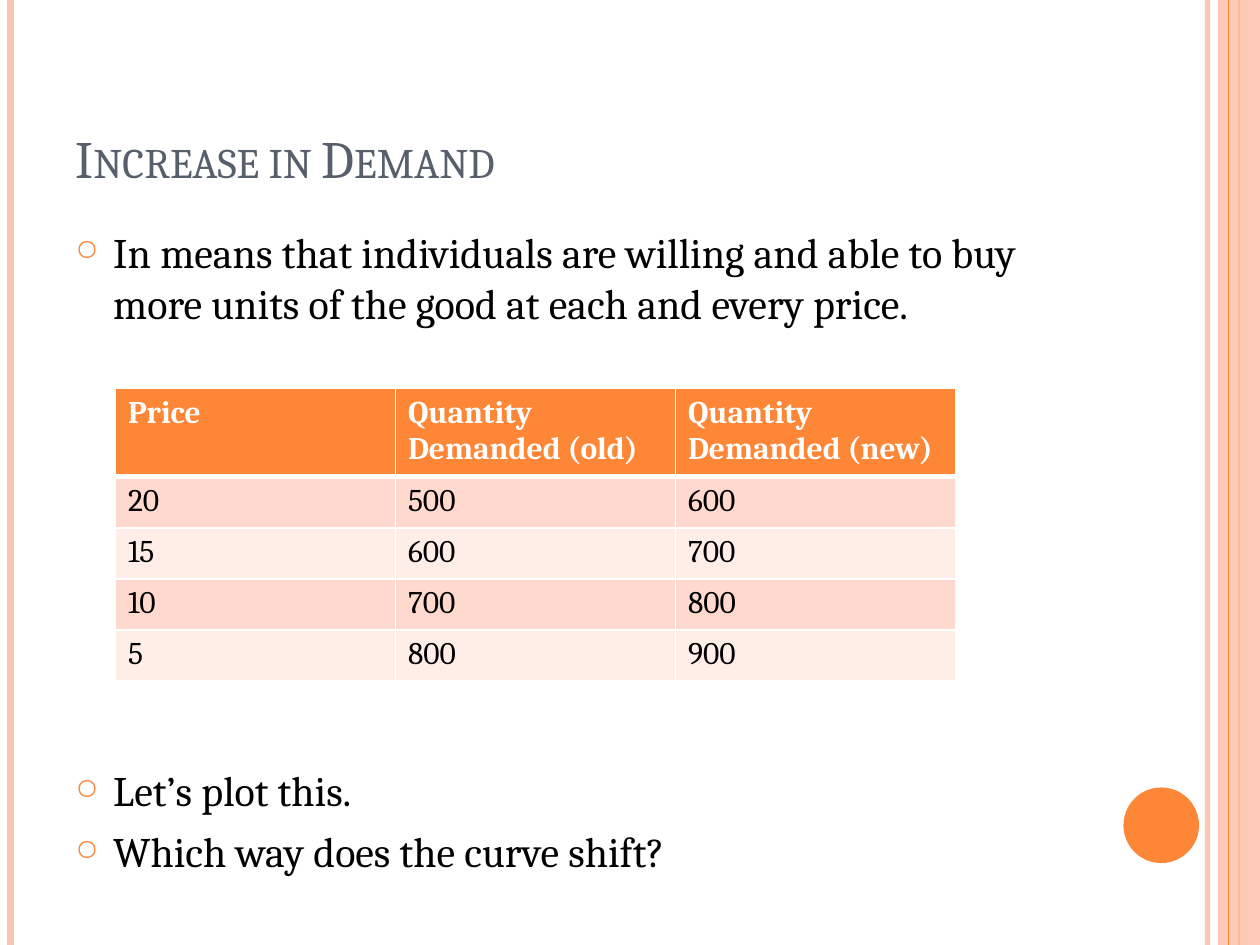
from pptx import Presentation
from pptx.dml.color import RGBColor
from pptx.enum.shapes import MSO_CONNECTOR as Connector, MSO_SHAPE as Shape
from pptx.enum.text import MSO_ANCHOR as Anchor
from pptx.oxml.ns import qn
from pptx.util import Pt
from lxml.etree import SubElement

COLORS = {
    "accent": "FE8637",
    "pale": "FEC3AE",
    "title": "575F6D",
    "text": "000000",
    "white": "FFFFFF",
    "band_dark": "FFD9CE",
    "band_light": "FFEDE8",
}


def rgb(name):
    return RGBColor.from_string(COLORS[name])


class DemandSlide:
    """Hold the style and the slide that the elements are added to."""

    font = "Cambria"
    indent = 21.6

    def __init__(self, slide):
        self.slide = slide

    def set_opacity(self, shape, percent):
        for color in shape.element.spPr.iter(qn("a:srgbClr")):
            SubElement(color, qn("a:alpha"), val=str(percent * 1000))

    def stripe(self, x, color, width, opacity=100):
        line = self.slide.shapes.add_connector(
            Connector.STRAIGHT, Pt(x), Pt(0), Pt(x), Pt(540))
        line.line.color.rgb = rgb(color)
        line.line.width = Pt(width)
        if opacity < 100:
            self.set_opacity(line, opacity)
        SubElement(line.element.spPr, qn("a:effectLst"))
        return line

    def shape(self, preset, box, color, opacity=100):
        shape = self.slide.shapes.add_shape(preset, *map(Pt, box))
        shape.shadow.inherit = False
        shape.fill.solid()
        shape.fill.fore_color.rgb = rgb(color)
        shape.line.fill.background()
        if opacity < 100:
            self.set_opacity(shape, opacity)
        return shape

    def run(self, paragraph, text, size, color, bold=False):
        run = paragraph.add_run()
        run.text = text
        run.font.name = self.font
        run.font.size = Pt(size)
        run.font.bold = bold
        run.font.color.rgb = rgb(color)
        return run

    def text_frame(self, box, anchor):
        frame = self.slide.shapes.add_textbox(*map(Pt, box)).text_frame
        frame.word_wrap = True
        frame.vertical_anchor = anchor
        return frame

    def title(self, box, text):
        frame = self.text_frame(box, Anchor.BOTTOM)
        run = self.run(frame.paragraphs[0], text, 30, "title")
        run.font._element.set("cap", "small")

    def bullets(self, box, items):
        frame = self.text_frame(box, Anchor.TOP)
        for index, (text, space_before) in enumerate(items):
            paragraph = frame.add_paragraph() if index else frame.paragraphs[0]
            paragraph.space_before = Pt(space_before)
            props = paragraph._p.get_or_add_pPr()
            props.set("marL", str(Pt(self.indent)))
            props.set("indent", str(-Pt(self.indent)))
            bullet_color = SubElement(props, qn("a:buClr"))
            SubElement(bullet_color, qn("a:srgbClr"), val=COLORS["accent"])
            SubElement(props, qn("a:buSzPct"), val="70000")
            SubElement(props, qn("a:buChar"), char="○")
            self.run(paragraph, text, 24, "text")

    def borders(self, cell, widths):
        props = cell._tc.get_or_add_tcPr()
        for side, width in zip("LRTB", widths):
            line = SubElement(props, qn(f"a:ln{side}"), w=str(Pt(width)))
            fill = SubElement(line, qn("a:solidFill"))
            SubElement(fill, qn("a:srgbClr"), val=COLORS["white"])

    def table(self, left, top, width, rows, header_height, row_height):
        height = header_height + row_height * (len(rows) - 1)
        table = self.slide.shapes.add_table(
            len(rows), len(rows[0]), Pt(left), Pt(top), Pt(width), Pt(height)).table
        for r, values in enumerate(rows):
            header = r == 0
            table.rows[r].height = Pt(row_height if r else header_height)
            band = "accent" if header else "band_dark" if r % 2 else "band_light"
            for c, value in enumerate(values):
                cell = table.cell(r, c)
                self.borders(cell, (1, 1, 3 if r == 1 else 1, 3 if header else 1))
                cell.fill.solid()
                cell.fill.fore_color.rgb = rgb(band)
                self.run(cell.text_frame.paragraphs[0], value, 18,
                         "white" if header else "text", header)


def main():
    deck = Presentation()
    deck.slide_width, deck.slide_height = Pt(720), Pt(540)
    page = DemandSlide(deck.slides.add_slide(deck.slide_layouts[6]))

    page.stripe(690, "pale", 3, 93)
    page.stripe(6, "pale", 4.5)
    band_axis = page.stripe(708, "accent", 1.5)
    side_band = page.shape(Shape.RECTANGLE, (696, 0, 24, 540), "pale", 87)
    band_axis.begin_connect(side_band, 0)
    band_axis.end_connect(side_band, 2)
    page.stripe(702, "accent", 0.75)
    page.shape(Shape.OVAL, (642, 450, 43.2, 43.2), "accent")

    page.title((36, 21.6, 588, 90), "Increase in Demand")
    page.bullets((36, 126, 588, 384), [
        ("In means that individuals are willing and able to buy more units "
         "of the good at each and every price.", 6),
        ("Let’s plot this.", 250),
        ("Which way does the curve shift?", 6),
    ])
    demand = [("Price", "Quantity Demanded (old)", "Quantity Demanded (new)")]
    demand += [(str(price), str(old), str(old + 100))
               for price, old in zip((20, 15, 10, 5), (500, 600, 700, 800))]
    page.table(66, 222, 480, demand, 48, 29.2)

    deck.save("out.pptx")


if __name__ == "__main__":
    main()
